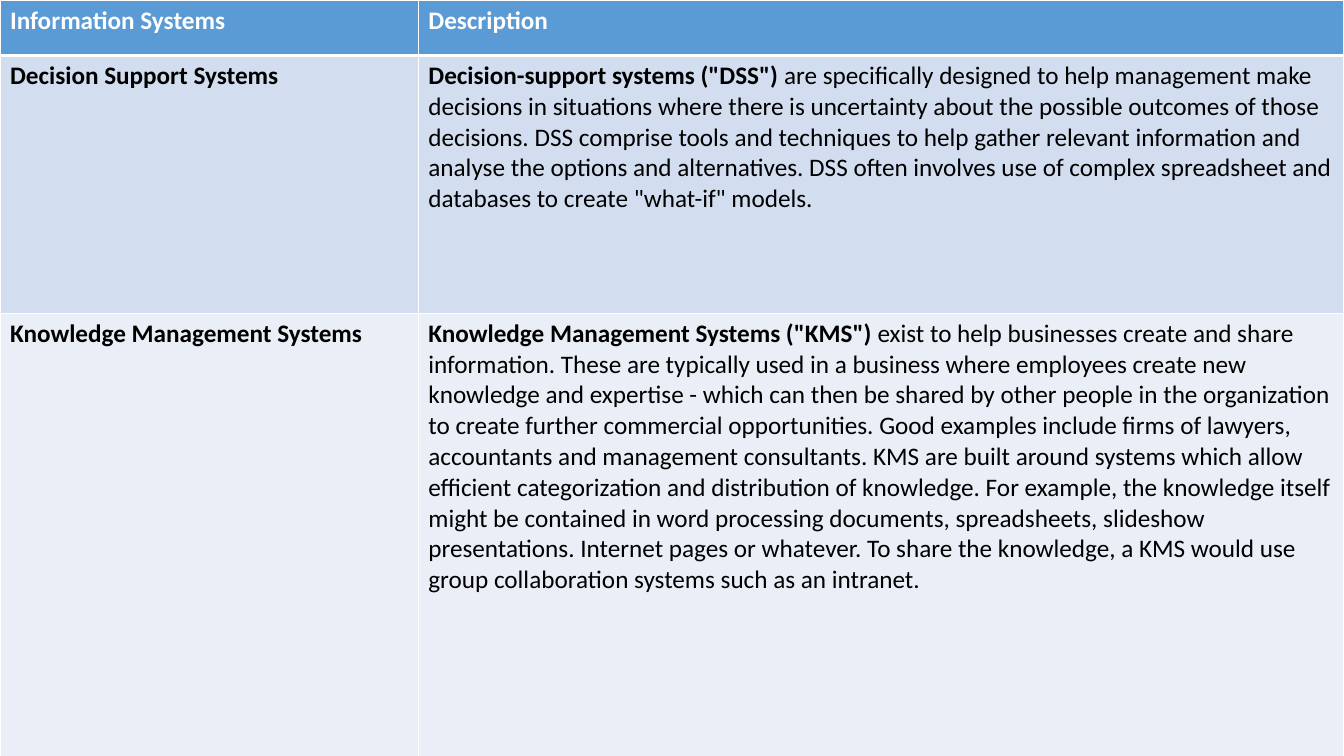
from lxml import etree
from pptx import Presentation
from pptx.dml.color import RGBColor
from pptx.oxml.ns import qn
from pptx.util import Pt

ROWS = [
    [[("Information Systems", True)], [("Description", True)]],
    [
        [("Decision Support Systems", True)],
        [
            ('Decision-support systems ("DSS") ', True),
            ("are specifically designed to help management make decisions in "
             "situations where there is uncertainty about the possible outcomes "
             "of those decisions. DSS comprise tools and techniques to help "
             "gather relevant information and analyse the options and "
             "alternatives. DSS often involves use of complex spreadsheet and "
             'databases to create "what-if" models.', False),
        ],
    ],
    [
        [("Knowledge Management Systems", True)],
        [
            ('Knowledge Management Systems ("KMS") ', True),
            ("exist to help businesses create and share information. These are "
             "typically used in a business where employees create new knowledge "
             "and expertise - which can then be shared by other people in the "
             "organization to create further commercial opportunities. Good "
             "examples include firms of lawyers, accountants and management "
             "consultants. KMS are built around systems which allow efficient "
             "categorization and distribution of knowledge. For example, the "
             "knowledge itself might be contained in word processing documents, "
             "spreadsheets, slideshow presentations. Internet pages or whatever. "
             "To share the knowledge, a KMS would use group collaboration "
             "systems such as an intranet.", False),
        ],
    ],
]
COLORS = {"head": "5B9BD5", "odd": "D2DEEF", "even": "EAEFF7",
          "white": "FFFFFF", "black": "000000"}
STYLES = [("head", "white"), ("odd", "black"), ("even", "black")]
WIDTHS = [298.8, 661.2]
HEIGHTS = [39.6, 184.3, 330.5]
FONT = {"name": "Calibri", "size": Pt(18)}
SIDES = ["a:lnL", "a:lnR", "a:lnT", "a:lnB"]


def color(name):
    return RGBColor.from_string(COLORS[name])


def border(cell, row):
    props = cell._tc.get_or_add_tcPr()
    for spot, side in enumerate(SIDES):
        thick = (row == 0 and side == "a:lnB") or (row == 1 and side == "a:lnT")
        line = etree.Element(qn(side), w=str(Pt(3 if thick else 1)))
        fill = etree.SubElement(line, qn("a:solidFill"))
        etree.SubElement(fill, qn("a:srgbClr"), val=COLORS["white"])
        props.insert(spot, line)


def write(cell, parts, ink):
    para = cell.text_frame.paragraphs[0]
    for text, bold in parts:
        run = para.add_run()
        run.text = text
        for key, value in {**FONT, "bold": bold}.items():
            setattr(run.font, key, value)
        run.font.color.rgb = color(ink)


def main():
    deck = Presentation()
    deck.slide_width, deck.slide_height = Pt(960), Pt(540)
    slide = deck.slides.add_slide(deck.slide_layouts[6])
    table = slide.shapes.add_table(
        len(ROWS), len(WIDTHS), 0, 0, Pt(sum(WIDTHS)), Pt(sum(HEIGHTS))).table
    for column, width in zip(table.columns, WIDTHS):
        column.width = Pt(width)
    for row, (cells, height, (back, ink)) in enumerate(zip(ROWS, HEIGHTS, STYLES)):
        table.rows[row].height = Pt(height)
        for col, parts in enumerate(cells):
            cell = table.cell(row, col)
            cell.fill.solid()
            cell.fill.fore_color.rgb = color(back)
            border(cell, row)
            write(cell, parts, ink)
    deck.save("out.pptx")


if __name__ == "__main__":
    main()
